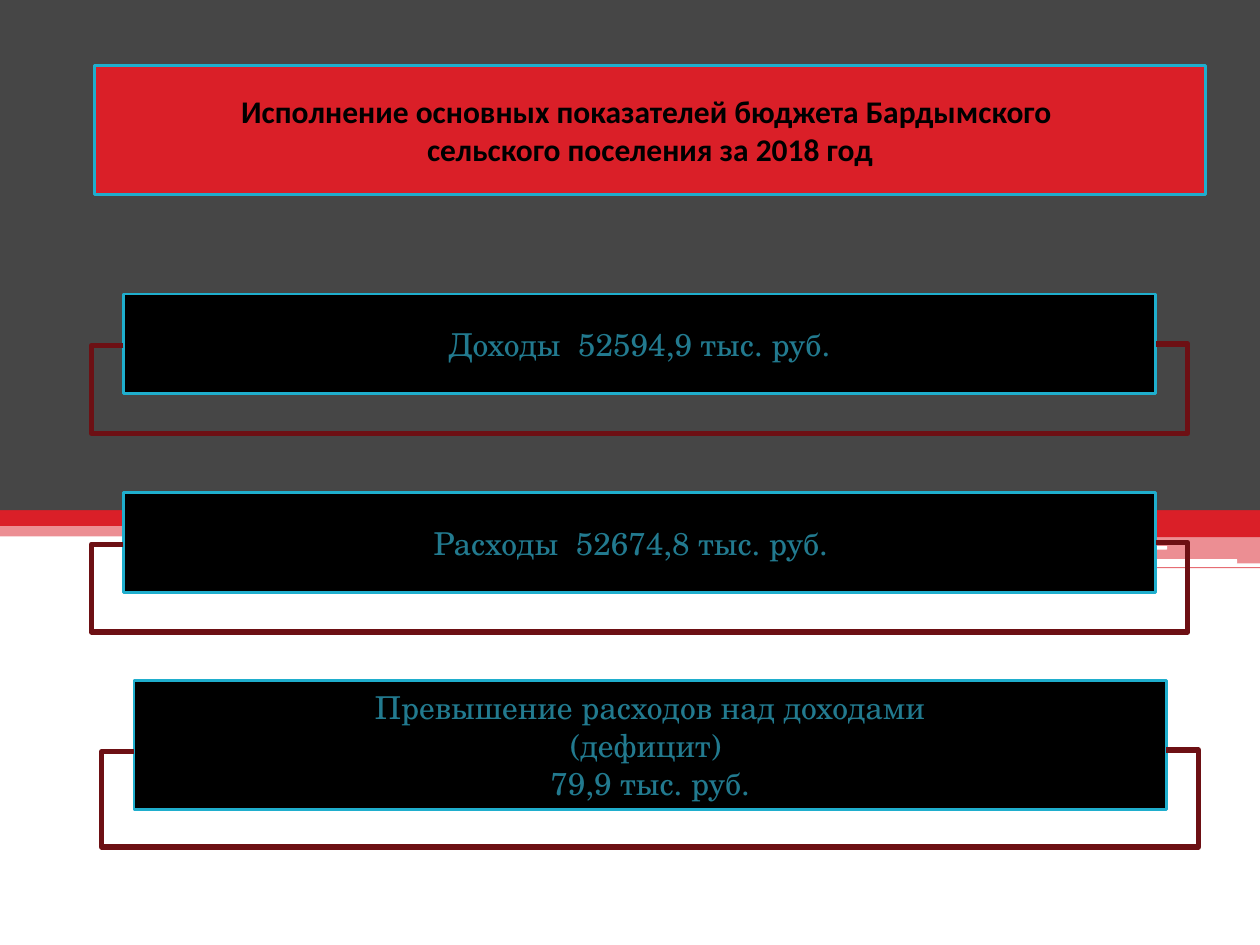
import pptx
import pptx.dml.color
import pptx.enum.shapes
import pptx.enum.text
import pptx.oxml
import pptx.oxml.ns
import pptx.util
from lxml import etree

Pt = pptx.util.Pt
qn = pptx.oxml.ns.qn
SHAPES = pptx.enum.shapes.MSO_SHAPE

COLORS = {
    "red": "DA1F28",
    "gray": "464646",
    "white": "FFFFFF",
    "black": "000000",
    "cyan": "1FAECD",
    "teal": "227A8F",
    "maroon": "6D1014",
}
SERIF = "TeX Gyre Schola"
SANS = "Calibri"

# left, top, width, height, colour, opacity in percent, preset
BACKDROP = [
    (426, 300, 294, 7, "red", 100, SHAPES.RECTANGLE),
    (426, 307, 294, 15, "red", 50, SHAPES.RECTANGLE),
    (426, 324, 294, 0.7, "red", 65, SHAPES.RECTANGLE),
    (426, 312, 241, 2, "white", 100, SHAPES.ROUNDED_RECTANGLE),
    (581, 319.5, 126, 2.7, "white", 100, SHAPES.ROUNDED_RECTANGLE),
    (0, 287, 720, 19.5, "red", 50, SHAPES.RECTANGLE),
    (0, 289.5, 720, 11, "red", 100, SHAPES.RECTANGLE),
    (505, 287, 215, 19.5, "red", 100, SHAPES.RECTANGLE),
    (0, 0, 720, 291.5, "gray", 100, SHAPES.RECTANGLE),
]

BOX_WIDTH = 590
# left, top, height, connector end, connector drop, lines of text
INDICATORS = [
    (70.5, 168, 57, 196.5, 50.5, ["Доходы  52594,9 тыс. руб."]),
    (70.5, 281.5, 57, 310, 50.5, ["Расходы  52674,8 тыс. руб.  "]),
    (76.5, 389, 73.5, 428.5, 55,
     ["Превышение расходов над доходами", "(дефицит) ", "79,9 тыс. руб."]),
]


def rgb(name):
    return pptx.dml.color.RGBColor.from_string(COLORS[name])


def add_block(slide, left, top, width, height, color, opacity=100,
              preset=SHAPES.RECTANGLE, outline=None):
    shape = slide.shapes.add_shape(preset, Pt(left), Pt(top), Pt(width), Pt(height))
    shape.shadow.inherit = False
    shape.fill.solid()
    shape.fill.fore_color.rgb = rgb(color)
    if opacity < 100:
        fill_color = shape.fill._xPr.find(".//" + qn("a:srgbClr"))
        etree.SubElement(fill_color, qn("a:alpha")).set("val", str(opacity * 1000))
    if outline:
        shape.line.color.rgb = rgb(outline)
        shape.line.width = Pt(1.5)
    else:
        shape.line.fill.background()
    return shape


def write_text(shape, lines, font, color, size=18, bold=False):
    frame = shape.text_frame
    frame.word_wrap = True
    frame.vertical_anchor = pptx.enum.text.MSO_ANCHOR.MIDDLE
    for index, line in enumerate(lines):
        paragraph = frame.paragraphs[0] if index == 0 else frame.add_paragraph()
        paragraph.alignment = pptx.enum.text.PP_ALIGN.CENTER
        run = paragraph.add_run()
        run.text = line
        run.font.name = font
        run.font.size = Pt(size)
        run.font.bold = bold
        run.font.color.rgb = rgb(color)


def add_loop(slide, left, end, drop, margin=18.5, rise=1):
    """Join both sides of a box with an elbow connector that runs below it."""
    connector = slide.shapes.add_connector(
        pptx.enum.shapes.MSO_CONNECTOR.ELBOW,
        Pt(left), Pt(end), Pt(left + BOX_WIDTH), Pt(end + rise))
    connector.line.color.rgb = rgb("maroon")
    connector.line.width = Pt(3)
    properties = connector._element.spPr
    etree.SubElement(properties, qn("a:effectLst"))
    transform = properties.find(qn("a:xfrm"))
    transform.set("rot", "10800000")
    transform.set("flipH", "1")
    geometry = properties.find(qn("a:prstGeom"))
    geometry.set("prst", "bentConnector5")
    adjustments = geometry.find(qn("a:avLst"))
    ratios = [-margin / BOX_WIDTH, -drop / rise, 1 + margin / BOX_WIDTH]
    for number, ratio in enumerate(ratios, start=1):
        guide = etree.SubElement(adjustments, qn("a:gd"))
        guide.set("name", f"adj{number}")
        guide.set("fmla", f"val {round(ratio * 100000)}")


def main():
    presentation = pptx.Presentation()
    presentation.slide_width = Pt(720)
    presentation.slide_height = Pt(540)
    slide = presentation.slides.add_slide(presentation.slide_layouts[6])

    for block in BACKDROP:
        add_block(slide, *block)

    title = add_block(slide, 54, 37.5, 635, 73.5, "red", outline="cyan")
    write_text(title, ["Исполнение основных показателей бюджета Бардымского ",
                       "сельского поселения за 2018 год"],
               font=SANS, color="black", bold=True)

    for left, top, height, end, drop, lines in INDICATORS:
        box = add_block(slide, left, top, BOX_WIDTH, height, "black", outline="cyan")
        write_text(box, lines, font=SERIF, color="teal")
        add_loop(slide, left, end, drop)

    presentation.save("out.pptx")


if __name__ == "__main__":
    main()
